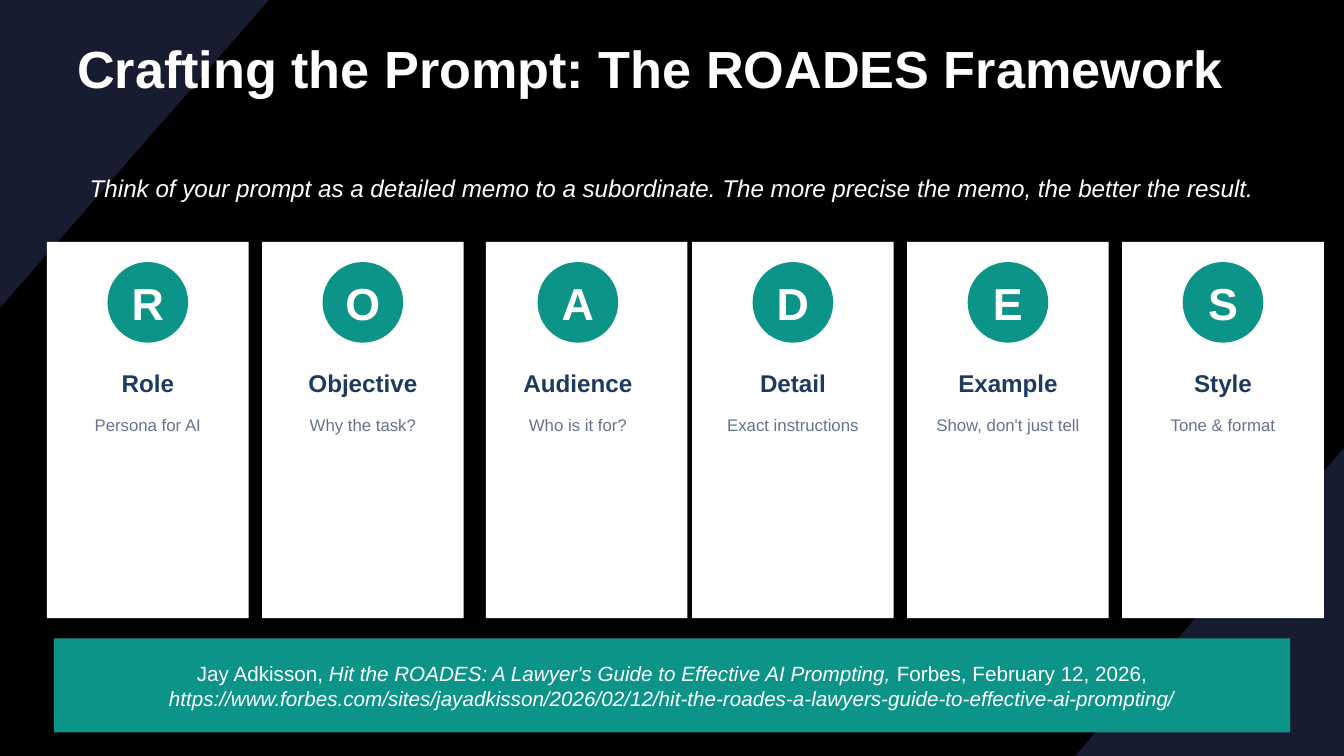
import pptx
import pptx.dml.color
import pptx.enum.shapes
import pptx.enum.text
import pptx.oxml
import pptx.oxml.ns
import pptx.util
from dataclasses import dataclass

EMU_PER_PX = 6096  # 150 px to the inch
PAGE_WIDTH, PAGE_HEIGHT = 2000, 1125
CARD_LEFT, CARD_STEP, CARD_TOP = 70, 320, 360
AUDIENCE_SHIFT = 13  # the third card sits a little right of its content

SHAPE = pptx.enum.shapes.MSO_SHAPE
ANCHOR = pptx.enum.text.MSO_ANCHOR
ALIGN = pptx.enum.text.PP_ALIGN


@dataclass(frozen=True)
class Theme:
    font: str = "Arial"
    black: str = "000000"
    white: str = "FFFFFF"
    corner: str = "181C30"
    teal: str = "0D9488"
    navy: str = "1E3A5F"
    slate: str = "64748B"
    title_size: float = 37.3
    letter_size: float = 32
    lead_size: float = 17.3
    source_size: float = 14.7
    hint_size: float = 12


THEME = Theme()

STEPS = [
    ("Role", "Persona for AI", 0),
    ("Objective", "Why the task?", 0),
    ("Audience", "Who is it for?", AUDIENCE_SHIFT),
    ("Detail", "Exact instructions", 0),
    ("Example", "Show, don't just tell", 0),
    ("Style", "Tone & format", 0),
]

SOURCE = [
    ("Jay Adkisson, ", False),
    ("Hit the ROADES: A Lawyer's Guide to Effective AI Prompting, ", True),
    ("Forbes, February 12, 2026, ", False),
    ("https://www.forbes.com/sites/jayadkisson/2026/02/12/"
     "hit-the-roades-a-lawyers-guide-to-effective-ai-prompting/", True),
]


def px(*lengths):
    return [length * EMU_PER_PX for length in lengths]


def rgb(value):
    return pptx.dml.color.RGBColor.from_string(value)


def paint(shape, color):
    """Give a shape a plain fill with no line and no shadow."""
    shape.fill.solid()
    shape.fill.fore_color.rgb = rgb(color)
    shape.line.fill.background()
    shape.shadow.inherit = False


def add_block(page, kind, frame, color):
    shape = page.shapes.add_shape(kind, *px(*frame))
    paint(shape, color)
    return shape


def add_corner(page, points):
    start, *others = points
    builder = page.shapes.build_freeform(*start, scale=EMU_PER_PX)
    builder.add_line_segments(others, close=True)
    paint(builder.convert_to_shape(), THEME.corner)


def add_soft_shadow(shape):
    """Fill the empty effect list with a faint outer shadow."""
    effects = shape._element.spPr.find(pptx.oxml.ns.qn("a:effectLst"))
    effects.append(pptx.oxml.parse_xml(
        f'<a:outerShdw {pptx.oxml.ns.nsdecls("a")} blurRad="76200" dist="25400" '
        'dir="8100000" algn="bl" rotWithShape="0">'
        f'<a:srgbClr val="{THEME.black}"><a:alpha val="10000"/></a:srgbClr>'
        '</a:outerShdw>'))


def add_text(page, frame, spans, size, color, bold=False,
             align=ALIGN.CENTER, anchor=ANCHOR.MIDDLE):
    """Add one paragraph made of (text, italic) spans."""
    box = page.shapes.add_textbox(*px(*frame))
    box.text_frame.word_wrap = True
    box.text_frame.vertical_anchor = anchor
    para = box.text_frame.paragraphs[0]
    para.alignment = align
    for text, italic in spans:
        span = para.add_run()
        span.text = text
        formats = {"name": THEME.font, "size": pptx.util.Pt(size),
                   "bold": bold, "italic": italic}
        for name, value in formats.items():
            setattr(span.font, name, value)
        span.font.color.rgb = rgb(color)


def add_card(page, left, name, hint, shift):
    card = add_block(page, SHAPE.RECTANGLE,
                     (left + shift, CARD_TOP, 300, 560), THEME.white)
    add_soft_shadow(card)
    badge = (left + 90, CARD_TOP + 30, 120, 120)
    add_block(page, SHAPE.OVAL, badge, THEME.teal)
    add_text(page, badge, [(name[0], False)], THEME.letter_size,
             THEME.white, bold=True)
    add_text(page, (left + 20, CARD_TOP + 170, 260, 80), [(name, False)],
             THEME.lead_size, THEME.navy, bold=True)
    add_text(page, (left + 20, CARD_TOP + 250, 260, 160), [(hint, False)],
             THEME.hint_size, THEME.slate, anchor=ANCHOR.TOP)


def main():
    deck = pptx.Presentation()
    deck.slide_width, deck.slide_height = px(PAGE_WIDTH, PAGE_HEIGHT)
    page = deck.slides.add_slide(deck.slide_layouts[6])
    page.background.fill.solid()
    page.background.fill.fore_color.rgb = rgb(THEME.black)

    add_corner(page, [(PAGE_WIDTH, 667), (PAGE_WIDTH, PAGE_HEIGHT),
                      (PAGE_WIDTH - 400, PAGE_HEIGHT)])
    add_corner(page, [(0, PAGE_HEIGHT - 667), (0, 0), (400, 0)])

    add_text(page, (100, 50, 1800, 100),
             [("Crafting the Prompt: The ROADES Framework", False)],
             THEME.title_size, THEME.white, bold=True, align=ALIGN.LEFT)
    add_text(page, (100, 230, 1800, 100),
             [("Think of your prompt as a detailed memo to a subordinate. "
               "The more precise the memo, the better the result.", True)],
             THEME.lead_size, THEME.white)

    for index, (name, hint, shift) in enumerate(STEPS):
        add_card(page, CARD_LEFT + index * CARD_STEP, name, hint, shift)

    add_block(page, SHAPE.RECTANGLE, (80, 950, 1840, 140), THEME.teal)
    add_text(page, (120, 970, 1760, 100), SOURCE,
             THEME.source_size, THEME.white)
    deck.save("out.pptx")


if __name__ == "__main__":
    main()
